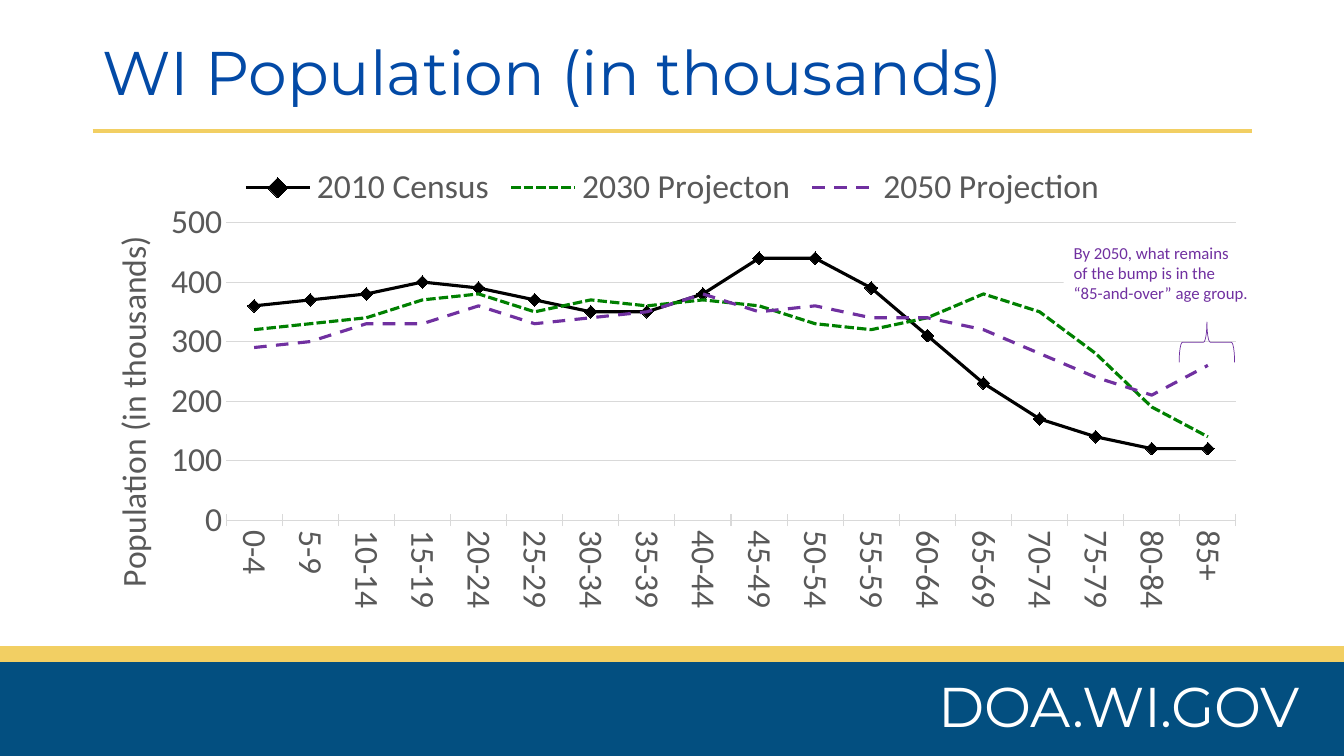
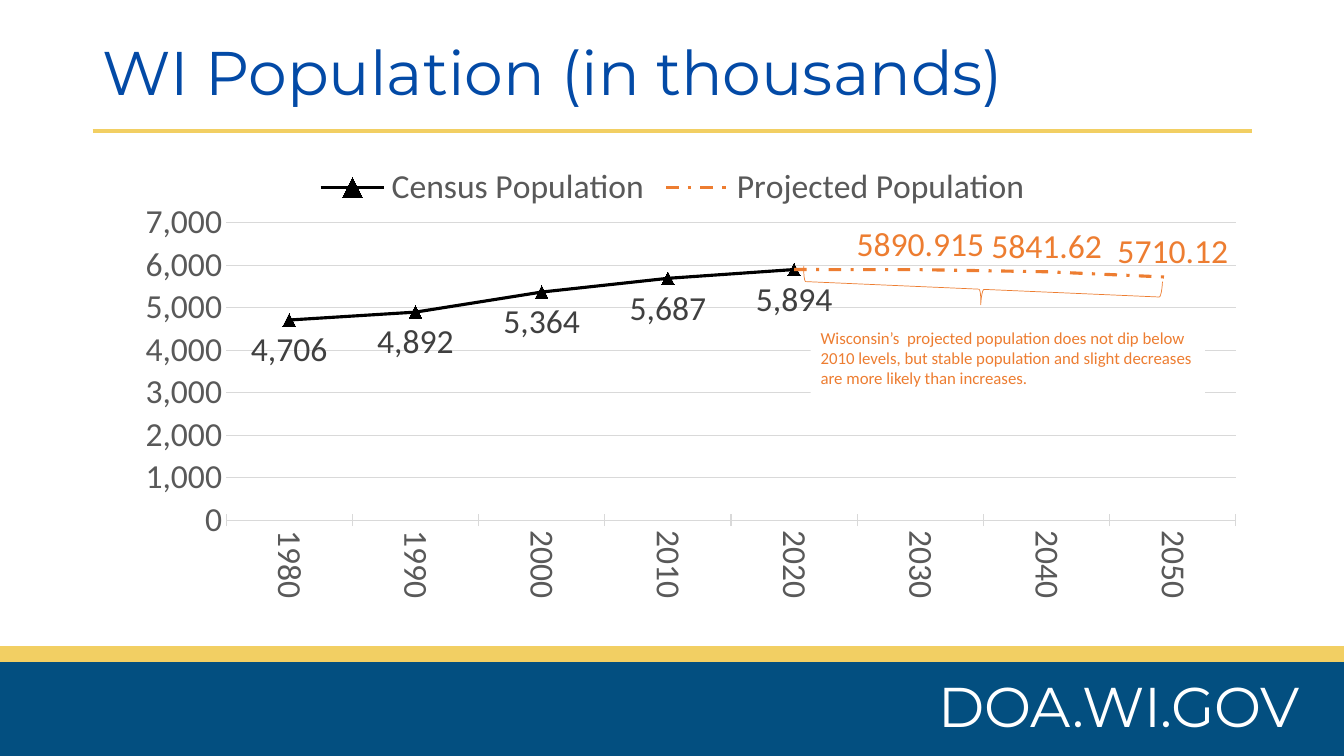
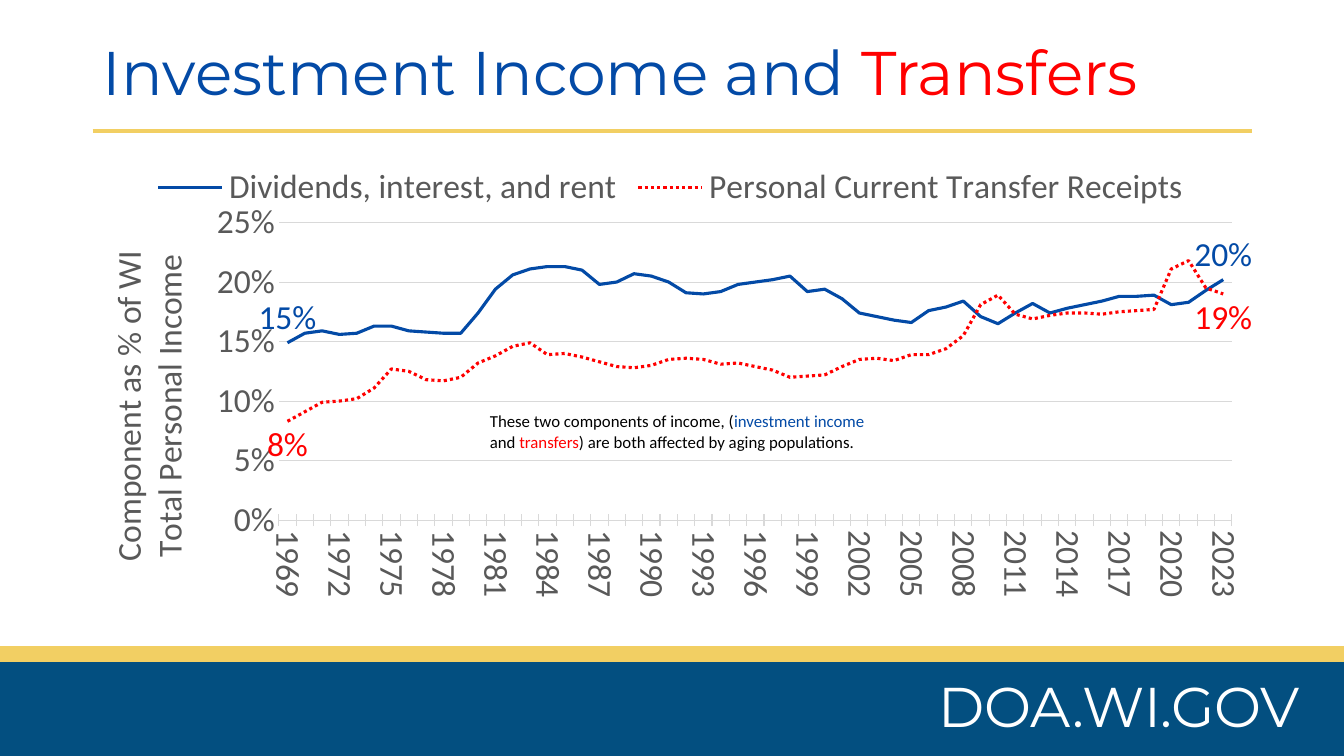
from lxml import etree
from pptx import Presentation
from pptx.chart import data as cd
from pptx.dml import color as dc
from pptx.enum import chart as ec, dml, shapes, text
from pptx.oxml import ns
from pptx.util import Inches, Pt

HUES = {
    "white": "FFFFFF", "black": "000000", "gold": "F2CF63", "navy": "034F80",
    "blue": "034AA6", "red": "FF0000", "green": "008000", "plum": "7030A0",
    "rust": "ED7D31", "gray": "595959", "dark": "404040", "grid": "D9D9D9",
}
DASH = dml.MSO_LINE
MARK = ec.XL_MARKER_STYLE
ABOVE, BELOW = ec.XL_LABEL_POSITION.ABOVE, ec.XL_LABEL_POSITION.BELOW

RENT = [
    .149, .157, .159, .156, .157, .163, .163, .159, .158, .157, .157,
    .174, .194, .206, .211, .213, .213, .210, .198, .200, .207, .205,
    .200, .191, .190, .192, .198, .200, .202, .205, .192, .194, .186,
    .174, .171, .168, .166, .176, .179, .184, .171, .165, .174, .182,
    .174, .178, .181, .184, .188, .188, .189, .181, .183, .193, .202,
]
AID = [
    .083, .091, .099, .100, .102, .111, .127, .125, .118, .117, .120,
    .132, .138, .146, .149, .139, .140, .137, .133, .129, .128, .130,
    .135, .136, .135, .131, .132, .129, .126, .120, .121, .122, .129,
    .135, .136, .134, .139, .139, .144, .155, .181, .189, .173, .169,
    .172, .174, .174, .173, .175, .176, .177, .211, .218, .195, .190,
]

SLIDES = [
    {
        "title": [("WI Population (in thousands)", "blue")],
        "cats": [f"{age}-{age + 4}" for age in range(0, 85, 5)] + ["85+"],
        "fmt": "#,##0", "top": 500, "step": 100, "plot": (.115, .871),
        "axis": ("Population (in thousands)", .01, .163),
        "series": [
            {"name": "2010 Census", "hue": "black", "mark": MARK.DIAMOND,
             "vals": [360, 370, 380, 400, 390, 370, 350, 350, 380,
                      440, 440, 390, 310, 230, 170, 140, 120, 120]},
            {"name": "2030 Projecton", "hue": "green", "dash": DASH.SQUARE_DOT,
             "vals": [320, 330, 340, 370, 380, 350, 370, 360, 370,
                      360, 330, 320, 340, 380, 350, 280, 190, 140]},
            {"name": "2050 Projection", "hue": "plum", "dash": DASH.DASH,
             "vals": [290, 300, 330, 330, 360, 330, 340, 350, 380,
                      350, 360, 340, 340, 320, 280, 240, 210, 260]},
        ],
        "note": {"at": (10.55, 2.36, 1.99, .71), "lines": [
            [("By 2050, what remains", "plum")],
            [("of the bump is in the", "plum")],
            [("“85-and-over” age group.", "plum")]]},
        "brace": {"at": (11.77, 3.12, .4, .55), "turn": 90, "hue": "plum",
                  "bends": (.083, .5)},
    },
    {
        "title": [("WI Population (in thousands)", "blue")],
        "cats": [str(year) for year in range(1980, 2051, 10)],
        "fmt": "#,##0", "top": 7000, "step": 1000, "plot": (.115, .871),
        "series": [
            {"name": "Census Population", "hue": "black", "mark": MARK.TRIANGLE,
             "vals": [4706, 4892, 5364, 5687, 5894, None, None, None],
             "tags": range(5), "side": BELOW, "ink": "dark"},
            {"name": "Projected Population", "hue": "rust",
             "dash": DASH.DASH_DOT, "fmt": "General",
             "vals": [None] * 4 + [5894, 5890.915, 5841.62, 5710.12],
             "tags": range(5, 8), "side": ABOVE},
        ],
        "note": {"at": (8.04, 3.2, 3.91, .71), "lines": [
            [("Wisconsin’s  projected population does not dip below", "rust")],
            [("2010 levels, but stable population and slight decreases", "rust")],
            [("are more likely than increases.", "rust")]]},
        "brace": {"at": (9.59, 1.09, .31, 3.56), "turn": 272.5, "hue": "rust",
                  "bends": (.083, .497)},
    },
    {
        "title": [("Investment Income and ", "blue"), ("Transfers", "red")],
        "cats": [str(year) for year in range(1969, 2024)],
        "fmt": "0%", "top": .25, "step": .05, "plot": (.161, .825), "skip": 3,
        "axis": ("Component as % of WI\nTotal Personal Income", .01, .199),
        "series": [
            {"name": "Dividends, interest, and rent", "hue": "blue",
             "vals": RENT, "tags": (0, 54), "side": ABOVE},
            {"name": "Personal Current Transfer Receipts", "hue": "red",
             "dash": DASH.ROUND_DOT, "vals": AID, "tags": (0, 54),
             "side": BELOW},
        ],
        "note": {"at": (4.76, 4.03, 4.08, .5), "alpha": 50, "lines": [
            [("These two components of income, (", "black"),
             ("investment income", "blue")],
            [("and ", "black"), ("transfers", "red"),
             (") are both affected by aging populations.", "black")]]},
    },
]


def rgb(hue):
    return dc.RGBColor.from_string(HUES[hue])


def box(at):
    return [Inches(n) for n in at]


def style(font, size, hue, face="Calibri"):
    font.size, font.name, font.bold = Pt(size), face, False
    font.color.rgb = rgb(hue)


def write(para, runs, size, face="Calibri"):
    for words, hue in runs:
        run = para.add_run()
        run.text = words
        style(run.font, size, hue, face)


def stroke(line, hue, width):
    line.color.rgb = rgb(hue)
    line.width = Pt(width)


def node(parent, tag, **attrs):
    return etree.SubElement(parent, ns.qn(tag), attrs)


def frame(owner, spot, **parts):
    for old in owner.findall(ns.qn("c:layout")):
        owner.remove(old)
    lay = etree.Element(ns.qn("c:layout"))
    man = node(lay, "c:manualLayout")
    for tag, val in parts.items():
        node(man, "c:" + tag, val=str(val))
    owner.insert(spot, lay)


def share(layout, slide):
    head = layout.placeholders[0]
    head.left, head.top, head.width, head.height = box((.92, .23, 11.5, 1.04))
    rule = slide.shapes.add_connector(
        shapes.MSO_CONNECTOR.STRAIGHT, *box((.92, 1.3, 12.42, 1.3)))
    stroke(rule.line, "gold", 3)
    node(rule._element.spPr, "a:effectLst")
    parts = [rule]
    for top, hue in ((6.41, "gold"), (6.57, "navy")):
        band = slide.shapes.add_shape(
            shapes.MSO_SHAPE.RECTANGLE, *box((0, top, 13.33, 7.5 - top)))
        band.shadow.inherit = False
        band.fill.solid()
        band.fill.fore_color.rgb = rgb(hue)
        band.line.fill.background()
        parts.append(band)
    site = slide.shapes.add_textbox(*box((3.15, 6.61, 9.84, .77)))
    site.text_frame.word_wrap = True
    para = site.text_frame.paragraphs[0]
    para.alignment = text.PP_ALIGN.RIGHT
    write(para, [("DOA.WI.GOV", "white")], 40, "Montserrat")
    for part in parts + [site]:
        layout.shapes._spTree.append(part._element)


def add_title(slide, runs):
    body = slide.shapes.title.text_frame
    body.auto_size = text.MSO_AUTO_SIZE.NONE
    body.vertical_anchor = text.MSO_ANCHOR.MIDDLE
    para = body.paragraphs[0]
    para.alignment = text.PP_ALIGN.LEFT
    para.line_spacing = .9
    write(para, runs, 44, "Montserrat")


def add_axes(chart, spec_):
    cat, val = chart.category_axis, chart.value_axis
    cat.major_tick_mark = ec.XL_TICK_MARK.CROSS
    cat.tick_label_position = ec.XL_TICK_LABEL_POSITION.LOW
    stroke(cat.format.line, "grid", .75)
    style(cat.tick_labels.font, 24, "gray")
    turn = cat._element.find(ns.qn("c:txPr")).find(ns.qn("a:bodyPr"))
    turn.set("rot", "5400000")
    turn.set("vert", "horz")
    if "skip" in spec_:
        skip = etree.Element(ns.qn("c:tickLblSkip"), val=str(spec_["skip"]))
        cat._element.find(ns.qn("c:noMultiLvlLbl")).addprevious(skip)
    val.minimum_scale, val.maximum_scale = 0, spec_["top"]
    val.major_unit = spec_["step"]
    val.major_tick_mark = ec.XL_TICK_MARK.NONE
    val.format.line.fill.background()
    stroke(val.major_gridlines.format.line, "grid", .75)
    style(val.tick_labels.font, 24, "gray")
    val.tick_labels.number_format = spec_["fmt"]
    val.tick_labels.number_format_is_linked = False
    if "axis" in spec_:
        words, x, y = spec_["axis"]
        body = val.axis_title.text_frame
        body.text = words
        for para in body.paragraphs:
            style(para.runs[0].font, 24, "gray")
        frame(val.axis_title._element, 1, xMode="edge", yMode="edge", x=x, y=y)


def add_line(line, row):
    hue = row["hue"]
    line.smooth = False
    stroke(line.format.line, hue, 2.25)
    if "dash" in row:
        line.format.line.dash_style = row["dash"]
    line.marker.style = row.get("mark", MARK.NONE)
    if "mark" in row:
        line.marker.size = 9
        line.marker.format.fill.solid()
        line.marker.format.fill.fore_color.rgb = rgb(hue)
        line.marker.format.line.color.rgb = rgb(hue)
    if "tags" in row:
        line.data_labels.show_value = False
        for spot in row["tags"]:
            tag = line.points[spot].data_label
            style(tag.font, 24, row.get("ink", hue))
            tag.position = row["side"]


def add_graph(slide, spec_):
    data = cd.CategoryChartData(number_format=spec_["fmt"])
    data.categories = spec_["cats"]
    for row in spec_["series"]:
        data.add_series(row["name"], row["vals"], row.get("fmt"))
    chart = slide.shapes.add_chart(
        ec.XL_CHART_TYPE.LINE_MARKERS, *box((.92, 1.52, 11.5, 4.68)), data).chart
    style(chart.font, 24, "gray")
    chart.has_title = False
    chart.has_legend = True
    chart.legend.position = ec.XL_LEGEND_POSITION.TOP
    chart.legend.include_in_layout = False
    style(chart.legend.font, 24, "gray")
    add_axes(chart, spec_)
    left, wide = spec_["plot"]
    frame(chart._chartSpace.find(".//" + ns.qn("c:plotArea")), 0,
          layoutTarget="inner", xMode="edge", yMode="edge",
          x=left, y=.147, w=wide, h=.631)
    plot = chart.plots[0]
    plot.vary_by_categories = False
    for line, row in zip(plot.series, spec_["series"]):
        add_line(line, row)


def add_note(slide, note):
    shape = slide.shapes.add_textbox(*box(note["at"]))
    shape.fill.solid()
    shape.fill.fore_color.rgb = rgb("white")
    if "alpha" in note:
        tint = shape._element.spPr.find(".//" + ns.qn("a:srgbClr"))
        node(tint, "a:alpha", val=str(note["alpha"] * 1000))
    body = shape.text_frame
    body.word_wrap = True
    for spot, runs in enumerate(note["lines"]):
        para = body.add_paragraph() if spot else body.paragraphs[0]
        write(para, runs, 12)


def add_brace(slide, brace):
    shape = slide.shapes.add_shape(
        shapes.MSO_SHAPE.LEFT_BRACE, *box(brace["at"]))
    shape.shadow.inherit = False
    shape.fill.background()
    stroke(shape.line, brace["hue"], .5)
    shape.rotation = brace["turn"]
    for spot, bend in enumerate(brace["bends"]):
        shape.adjustments[spot] = bend


def main():
    deck = Presentation()
    deck.slide_width, deck.slide_height = Inches(13.33), Inches(7.5)
    layout = deck.slide_layouts[5]
    for spot, page in enumerate(SLIDES):
        slide = deck.slides.add_slide(layout)
        if not spot:
            share(layout, slide)
        add_title(slide, page["title"])
        add_graph(slide, page)
        add_note(slide, page["note"])
        if "brace" in page:
            add_brace(slide, page["brace"])
    deck.save("out.pptx")


if __name__ == "__main__":
    main()
